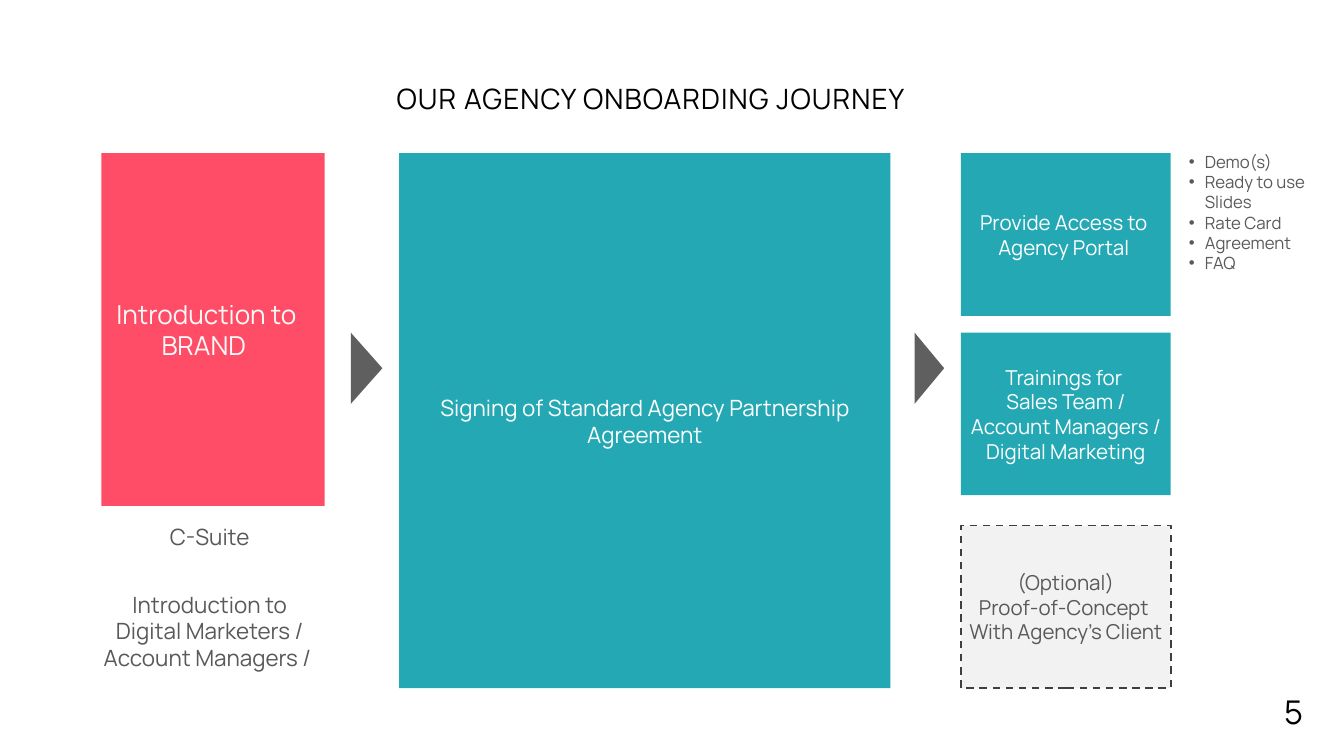
from dataclasses import dataclass

from lxml import etree
from pptx import Presentation
from pptx import util as u
from pptx.dml import color
from pptx.enum import dml, shapes, text
from pptx.oxml import ns

FONT = "Manrope"
COLORS = {
    "white": "FFFFFF", "off_white": "FAFAFA", "black": "000000",
    "coral": "FF4D67", "teal": "24A9B4", "pale": "F2F2F2",
    "arrow": "5F5F5F", "dash": "3F3F3F", "body": "595959",
}
TOP = 2.28
STEP_LEFT, STEP_WIDTH, STEP_HEIGHT = 14.3, 3.12, 2.42


@dataclass
class Style:
    size: float
    color: str
    line_height: float
    align: text.PP_ALIGN = text.PP_ALIGN.CENTER


@dataclass
class Card:
    left: float
    top: float
    width: float
    height: float
    fill: str
    lines: list[str]
    style: Style
    right_inset: float = 0.06
    dashed: bool = False
    rounded: bool = False


def rgb(name: str) -> color.RGBColor:
    return color.RGBColor.from_string(COLORS[name])


def write(frame, lines: list[str], style: Style) -> None:
    """Write one paragraph per line in a single style."""
    frame.word_wrap = True
    for index, line in enumerate(lines):
        paragraph = frame.paragraphs[0] if index == 0 else frame.add_paragraph()
        paragraph.text = line
        paragraph.alignment = style.align
        paragraph.line_spacing = u.Pt(style.line_height)
        paragraph.font.name = FONT
        paragraph.font.size = u.Pt(style.size)
        paragraph.font.color.rgb = rgb(style.color)


def set_insets(frame, inset: float) -> None:
    frame.margin_left = frame.margin_right = u.Inches(inset)
    frame.margin_top = frame.margin_bottom = u.Inches(inset)


def add_filled(slide, kind, left: float, top: float, width: float, height: float, fill: str):
    shape = slide.shapes.add_shape(
        kind, u.Inches(left), u.Inches(top), u.Inches(width), u.Inches(height))
    shape.shadow.inherit = False
    shape.fill.solid()
    shape.fill.fore_color.rgb = rgb(fill)
    shape.line.fill.background()
    return shape


def add_card(slide, card: Card):
    kind = shapes.MSO_SHAPE.ROUNDED_RECTANGLE if card.rounded else shapes.MSO_SHAPE.RECTANGLE
    shape = add_filled(slide, kind, card.left, card.top, card.width, card.height, card.fill)
    if card.rounded:
        shape.adjustments[0] = 0.31
    if card.dashed:
        shape.line.color.rgb = rgb("dash")
        shape.line.width = u.Pt(2)
        shape.line.dash_style = dml.MSO_LINE.DASH
    frame = shape.text_frame
    set_insets(frame, 0.06)
    frame.margin_right = u.Inches(card.right_inset)
    frame.vertical_anchor = text.MSO_ANCHOR.MIDDLE
    write(frame, card.lines, card.style)
    return shape


def add_arrow(slide, left: float, depth: float) -> None:
    """Draw a triangle pointing right, centred between the columns."""
    side, middle = 1.06, 5.48
    triangle = add_filled(
        slide, shapes.MSO_SHAPE.ISOSCELES_TRIANGLE,
        left + (depth - side) / 2, middle - depth / 2, side, depth, "arrow")
    triangle.rotation = 90


def add_label(slide, left: float, top: float, width: float, height: float,
              lines: list[str], style: Style):
    box = slide.shapes.add_textbox(
        u.Inches(left), u.Inches(top), u.Inches(width), u.Inches(height))
    set_insets(box.text_frame, 0)
    write(box.text_frame, lines, style)
    return box.text_frame


def add_bullets(frame) -> None:
    for paragraph in frame.paragraphs:
        properties = paragraph._p.get_or_add_pPr()
        properties.set("marL", str(u.Inches(0.49)))
        properties.set("indent", str(u.Inches(-0.24)))
        etree.SubElement(properties, ns.qn("a:buFont")).set("typeface", "Arial")
        bullet = etree.SubElement(properties, ns.qn("a:buChar"))
        bullet.set("char", "•")
        # Bullet elements come before the default run properties
        properties.append(properties.find(ns.qn("a:defRPr")))


def main() -> None:
    presentation = Presentation()
    presentation.slide_width = u.Inches(20)
    presentation.slide_height = u.Inches(11.25)
    slide = presentation.slides.add_slide(presentation.slide_layouts[6])

    # Title
    title = add_card(slide, Card(
        4.84, 0.97, 9.69, 0.89, "white", ["OUR AGENCY ONBOARDING JOURNEY"],
        Style(30, "black", 42), rounded=True))
    title_run = title.text_frame.paragraphs[0].runs[0]
    title_run._r.get_or_add_rPr().set("spc", "120")

    # Introduction and agreement
    add_card(slide, Card(
        1.51, TOP, 3.32, 5.25, "coral", ["Introduction to BRAND "],
        Style(28, "off_white", 33.6), right_inset=0.26))
    add_card(slide, Card(
        5.94, TOP, 7.31, 7.96, "teal",
        ["Signing of Standard Agency Partnership Agreement"],
        Style(24, "white", 28.8)))

    # Steps after signing
    step_style = Style(22, "white", 26.4)
    steps = [
        (TOP, ["Provide Access to ", "Agency Portal "]),
        (4.95, ["Trainings for ", "Sales Team / Account Managers / Digital Marketing"]),
    ]
    for top, lines in steps:
        add_card(slide, Card(
            STEP_LEFT, top, STEP_WIDTH, STEP_HEIGHT, "teal", lines, step_style))
    add_card(slide, Card(
        STEP_LEFT, 7.82, STEP_WIDTH, STEP_HEIGHT, "pale",
        ["(Optional)", "Proof-of-Concept ", "With Agency’s Client"],
        Style(22, "body", 26.4), dashed=True))

    # Arrows between columns
    add_arrow(slide, 5.22, 0.47)
    add_arrow(slide, 13.61, 0.44)

    # Audience of the introduction
    audience = add_label(
        slide, 1.4, 7.79, 3.44, 2.79,
        ["C-Suite", "Introduction to", "Digital Marketers / Account Managers / "],
        Style(24, "body", 28.8))
    audience.paragraphs[1].space_before = u.Pt(43.2)

    # Portal contents
    contents = add_label(
        slide, 17.44, 2.26, 2.2, 2.36,
        ["Demo(s)", "Ready to use Slides", "Rate Card", "Agreement", "FAQ"],
        Style(18, "body", 21.6, text.PP_ALIGN.LEFT))
    add_bullets(contents)

    # Page number
    add_label(slide, 19.11, 9.95, 0.31, 0.87, ["5"],
              Style(35, "black", 66.5, text.PP_ALIGN.LEFT))

    presentation.save("out.pptx")


if __name__ == "__main__":
    main()
